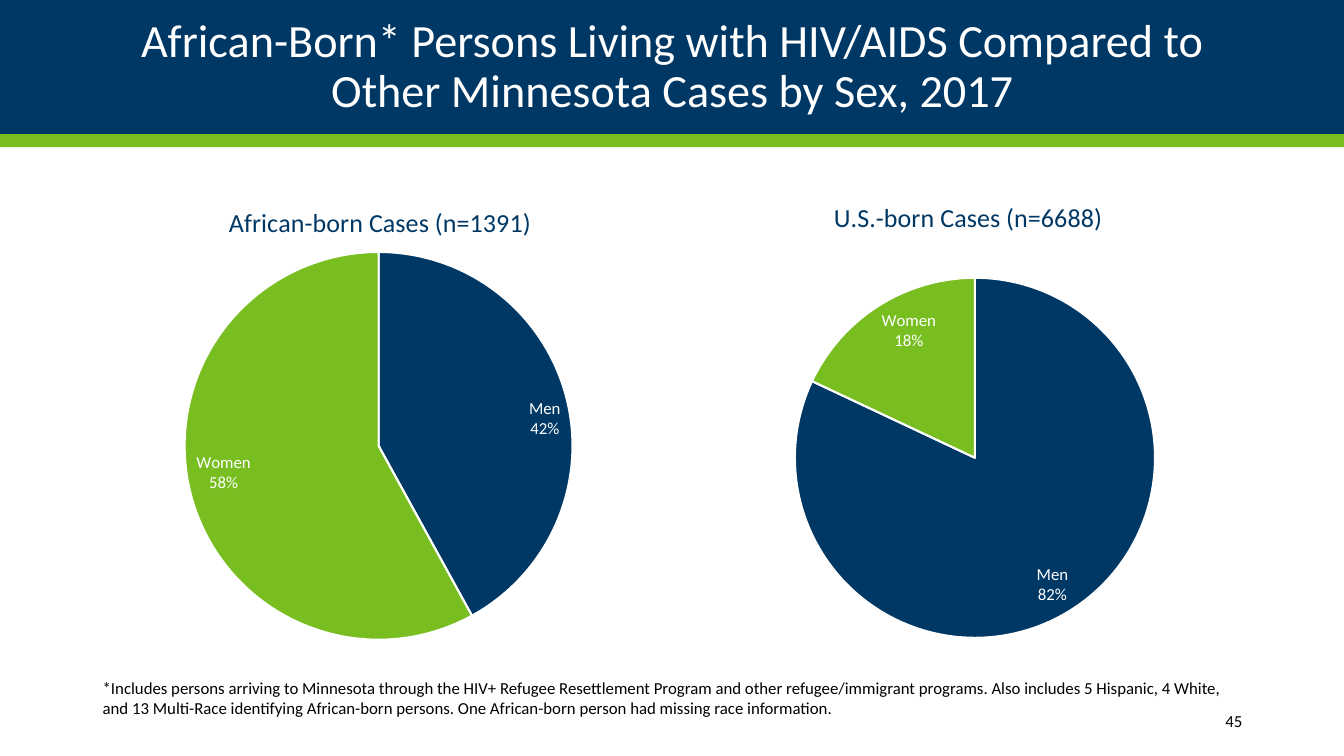
from lxml import etree
from pptx import Presentation
from pptx import util as u
from pptx.chart.data import CategoryChartData
from pptx.dml.color import RGBColor
from pptx.enum import chart as ch, shapes, text
from pptx.oxml import parse_xml
from pptx.oxml.ns import nsdecls, qn

HUES = {"navy": "003865", "green": "78BE21", "white": "FFFFFF", "black": "000000"}
FACE = "Calibri"

deck = Presentation()
deck.slide_width, deck.slide_height = u.Inches(13.33), u.Inches(7.5)
slide = deck.slides.add_slide(deck.slide_layouts[6])


def style(font, size, hue):
    font.name, font.size, font.bold = FACE, u.Pt(size), False
    font.color.rgb = RGBColor.from_string(HUES[hue])


def place(node, spots, inner=False):
    for old in node.findall(qn("c:layout")):
        node.remove(old)
    layout = parse_xml(f"<c:layout {nsdecls('c')}><c:manualLayout/></c:layout>")
    tags = [("layoutTarget", "inner")] if inner else []
    tags += [("xMode", "edge"), ("yMode", "edge"), *zip("xywh", spots)]
    for tag, val in tags:
        etree.SubElement(layout[0], qn(f"c:{tag}")).set("val", str(val))
    if inner:
        node.insert(0, layout)
    else:
        node.find(qn("c:tx")).addnext(layout)


for top, height, hue in [(0, 1.33, "navy"), (1.33, 0.13, "green")]:
    band = slide.shapes.add_shape(
        shapes.MSO_SHAPE.RECTANGLE, 0, u.Inches(top), deck.slide_width, u.Inches(height))
    band.shadow.inherit = False
    band.fill.solid()
    band.fill.fore_color.rgb = RGBColor.from_string(HUES[hue])
    band.line.fill.background()

pies = [
    (0.92, "African-born Cases (n=1391)", (42, 58), (0.23, 0.05), (0.16, 0.16, 0.68, 0.81)),
    (6.75, "U.S.-born Cases (n=6688)", (82, 18), (0.26, 0.04), (0.2, 0.21, 0.63, 0.76)),
]
for left, name, vals, head, plot in pies:
    data = CategoryChartData()
    data.categories = ["Men", "Women"]
    data.add_series(name, vals)
    pie = slide.shapes.add_chart(
        ch.XL_CHART_TYPE.PIE, u.Inches(left), u.Inches(1.74),
        u.Inches(5.67), u.Inches(4.75), data).chart
    style(pie.font, 10, "navy")
    pie.has_legend = False
    pie.has_title = True
    title = pie.chart_title
    title.text_frame.text = name
    style(title.text_frame.paragraphs[0].font, 18.6, "navy")
    title.include_in_layout = False
    place(title._element, head)
    place(pie.plots[0]._element.getparent(), plot, True)

    pie.plots[0].vary_by_categories = True
    series = pie.plots[0].series[0]
    for i, hue in enumerate(["navy", "green"]):
        slice_ = series.points[i].format
        slice_.fill.solid()
        slice_.fill.fore_color.rgb = RGBColor.from_string(HUES[hue])
        slice_.line.color.rgb = RGBColor.from_string(HUES["white"])
        slice_.line.width = u.Pt(1.5)
    labels = series.data_labels
    labels.show_value = False
    labels.show_percentage = True
    labels.show_category_name = True
    labels.number_format = "0%"
    labels.number_format_is_linked = False
    labels.position = ch.XL_LABEL_POSITION.INSIDE_END
    style(labels.font, 12, "white")

align = text.PP_ALIGN
notes = [
    ((0.92, 0.17, 11.5, 1), align.CENTER, 33, "white", 0.9,
     "African-Born* Persons Living with HIV/AIDS Compared to Other Minnesota Cases by Sex, 2017"),
    ((10.82, 6.95, 1.6, 0.4), align.RIGHT, 12, "black", 1, "45"),
    ((0.92, 6.49, 11.5, 0.86), align.LEFT, 12, "black", 1,
     "*Includes persons arriving to Minnesota through the HIV+ Refugee Resettlement Program "
     "and other refugee/immigrant programs. Also includes 5 Hispanic, 4 White, and 13 "
     "Multi-Race identifying African-born persons. One African-born person had missing race "
     "information."),
]
for box, side, size, hue, gap, words in notes:
    frame = slide.shapes.add_textbox(*map(u.Inches, box)).text_frame
    frame.word_wrap = True
    frame.vertical_anchor = text.MSO_ANCHOR.MIDDLE
    frame.text = words
    para = frame.paragraphs[0]
    para.alignment, para.line_spacing = side, gap
    style(para.font, size, hue)

deck.save("out.pptx")
